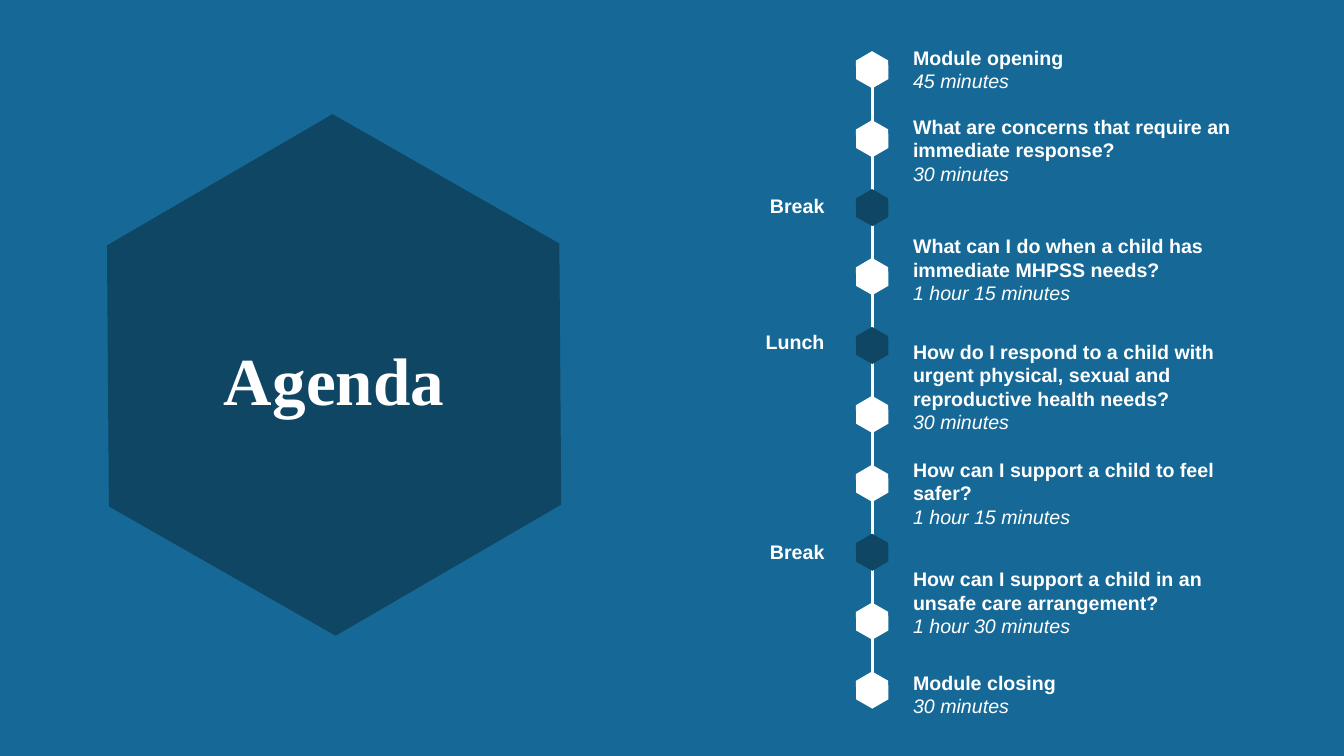
from lxml import etree
from pptx import Presentation
from pptx.dml.color import RGBColor
from pptx.enum.shapes import MSO_CONNECTOR, MSO_SHAPE
from pptx.enum.text import MSO_ANCHOR, MSO_AUTO_SIZE, PP_ALIGN
from pptx.oxml.ns import qn
from pptx.util import Cm, Pt

HEXAGON = MSO_SHAPE.HEXAGON
STRAIGHT = MSO_CONNECTOR.STRAIGHT
MIDDLE = MSO_ANCHOR.MIDDLE
FIT_SHAPE, NO_FIT = MSO_AUTO_SIZE.SHAPE_TO_FIT_TEXT, MSO_AUTO_SIZE.NONE
LEFT, CENTER, RIGHT = PP_ALIGN.LEFT, PP_ALIGN.CENTER, PP_ALIGN.RIGHT

COLORS = {"background": "166996", "dark": "0E4664", "white": "FFFFFF"}
TITLE_FONT, BODY_FONT = "Times New Roman", "Arial"
HEXAGON_TURN = 29.7
MARKER_WIDTH, MARKER_HEIGHT = 0.94, 0.81
LINE_HEIGHT, BOX_PADDING = 0.6, 0.25

# Top offset in the timeline, number of lines, heading, duration
SESSIONS = [
    (0, 2, "Module opening", "45 minutes"),
    (1.75, 3, "What are concerns that require an immediate response?", "30 minutes"),
    (4.75, 3, "What can I do when a child has immediate MHPSS needs?", "1 hour 15 minutes"),
    (7.41, 4, "How do I respond to a child with urgent physical, sexual and "
              "reproductive health needs?", "30 minutes"),
    (10.39, 3, "How can I support a child to feel safer?", "1 hour 15 minutes"),
    (13.15, 3, "How can I support a child in an unsafe care arrangement?", "1 hour 30 minutes"),
    (15.75, 2, "Module closing", "30 minutes"),
]
# Top offset in the timeline, label
PAUSES = [(3.73, "Break"), (7.16, "Lunch"), (12.47, "Break")]
MARKER_COUNT = len(SESSIONS) + len(PAUSES)
PAUSE_MARKERS = {2, 4, 7}


def color(name):
    return RGBColor.from_string(COLORS[name])


def add_hexagon(page, left, top, width, height, fill):
    hexagon = page.shapes.add_shape(HEXAGON, Cm(left), Cm(top), Cm(width), Cm(height))
    hexagon.adjustments[0] = 0.29
    hexagon.rotation = HEXAGON_TURN
    hexagon.shadow.inherit = False
    hexagon.fill.solid()
    hexagon.fill.fore_color.rgb = color(fill)
    hexagon.line.fill.background()
    return hexagon


def style_font(font, name, size, bold=True, italic=False):
    font.name, font.size = name, Pt(size)
    font.bold, font.italic = bold, italic
    font.color.rgb = color("white")


def add_text(page, left, top, width, lines, texts, align=LEFT):
    """Add a bold first paragraph, with any later ones in italics."""
    height = lines * LINE_HEIGHT + BOX_PADDING
    box = page.shapes.add_textbox(Cm(left), Cm(top), Cm(width), Cm(height))
    frame = box.text_frame
    frame.word_wrap = True
    frame.auto_size = FIT_SHAPE
    frame.text = "\n".join(texts)
    for index, para in enumerate(frame.paragraphs):
        para.alignment = align
        style_font(para.font, BODY_FONT, 14, bold=index == 0, italic=index > 0)


def build_title(page, left, top, width, height):
    hexagon = add_hexagon(page, left, top, width, height, "dark")
    title = page.shapes.title
    hexagon.element.addnext(title.element)  # keep the title in front
    title.left, title.top = Cm(left + 1.01), Cm(top + 5.13)
    title.width, title.height = Cm(width - 2.02), Cm(1.55)
    frame = title.text_frame
    frame.text = "Agenda"
    frame.word_wrap = True
    frame.auto_size = NO_FIT
    frame.vertical_anchor = MIDDLE
    para = frame.paragraphs[0]
    para.alignment = CENTER
    para.line_spacing = 0.9
    style_font(para.font, TITLE_FONT, 48)


def build_timeline(page, left, top, width, height):
    axis = left + 4.71
    first_center = top + 0.74
    step = (height - 1.07) / (MARKER_COUNT - 1)
    last_center = first_center + step * (MARKER_COUNT - 1)

    # Axis behind the markers
    line = page.shapes.add_connector(
        STRAIGHT, Cm(axis), Cm(first_center), Cm(axis), Cm(last_center))
    line.line.color.rgb = color("white")
    line.line.width = Pt(2.25)
    etree.SubElement(line.element.spPr, qn("a:effectLst"))

    # Evenly spaced markers, dark for pauses
    for index in range(MARKER_COUNT):
        center = first_center + index * step
        add_hexagon(page, axis - MARKER_WIDTH / 2, center - MARKER_HEIGHT / 2,
                    MARKER_WIDTH, MARKER_HEIGHT,
                    "dark" if index in PAUSE_MARKERS else "white")

    # Sessions on the right, pauses on the left
    session_left = axis + 0.78
    for offset, lines, heading, duration in SESSIONS:
        add_text(page, session_left, top + offset, left + width - session_left,
                 lines, [heading, duration])
    for offset, label in PAUSES:
        add_text(page, left, top + offset, 3.76, 1, [label], RIGHT)


def main():
    deck = Presentation()
    deck.slide_width, deck.slide_height = Cm(33.87), Cm(19.05)
    page = deck.slides.add_slide(deck.slide_layouts[5])
    page.background.fill.solid()
    page.background.fill.fore_color.rgb = color("background")
    build_title(page, 1.83, 3.76, 13.18, 11.38)
    build_timeline(page, 17.27, 1.02, 14.61, 16.7)
    deck.save("out.pptx")


if __name__ == "__main__":
    main()
